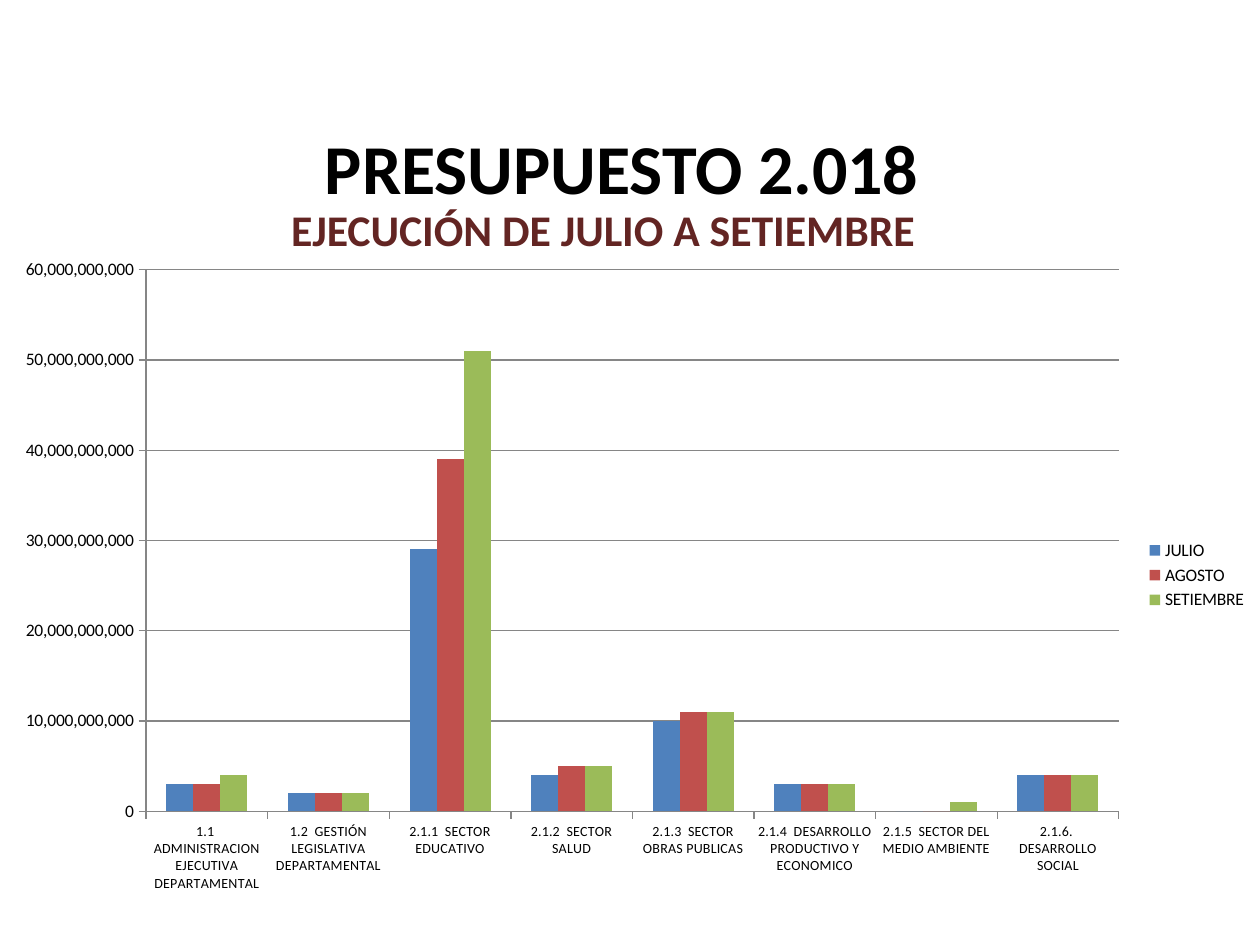
from typing import NamedTuple

from lxml import etree
from pptx import Presentation
from pptx.chart.data import CategoryChartData
from pptx.dml.color import RGBColor
from pptx.enum.chart import XL_CHART_TYPE, XL_LEGEND_POSITION, XL_TICK_MARK
from pptx.enum.text import MSO_ANCHOR, PP_ALIGN
from pptx.oxml.ns import qn
from pptx.util import Inches, Pt

FONT = "Calibri"
BLACK = RGBColor(0x00, 0x00, 0x00)
MAROON = RGBColor(0x63, 0x25, 0x23)
BLUE = RGBColor(0x4F, 0x81, 0xBD)
RED = RGBColor(0xC0, 0x50, 0x4D)
GREEN = RGBColor(0x9B, 0xBB, 0x59)
GRAY = RGBColor(0x86, 0x86, 0x86)
BILLION = 1_000_000_000


class Box(NamedTuple):
    left: float
    top: float
    width: float
    height: float

    def inches(self):
        return [Inches(length) for length in self]


class Month(NamedTuple):
    name: str
    color: RGBColor
    billions: list[int]


SECTORS = [
    "1.1  ADMINISTRACION EJECUTIVA DEPARTAMENTAL",
    "1.2  GESTIÓN LEGISLATIVA DEPARTAMENTAL",
    "2.1.1  SECTOR EDUCATIVO",
    "2.1.2  SECTOR SALUD",
    "2.1.3  SECTOR OBRAS PUBLICAS",
    "2.1.4  DESARROLLO PRODUCTIVO Y ECONOMICO",
    "2.1.5  SECTOR DEL MEDIO AMBIENTE",
    "2.1.6.  DESARROLLO SOCIAL",
]
MONTHS = [
    Month("JULIO", BLUE, [3, 2, 29, 4, 10, 3, 0, 4]),
    Month("AGOSTO", RED, [3, 2, 39, 5, 11, 3, 0, 4]),
    Month("SETIEMBRE", GREEN, [4, 2, 51, 5, 11, 3, 1, 4]),
]


def add_heading(slide, text: str, box: Box, *, size: float, color: RGBColor) -> None:
    frame = slide.shapes.add_textbox(*box.inches()).text_frame
    frame.word_wrap = True
    frame.vertical_anchor = MSO_ANCHOR.MIDDLE
    frame.margin_left = frame.margin_right = Inches(0.07)
    frame.margin_top = frame.margin_bottom = Inches(0.04)
    line = frame.paragraphs[0]
    line.alignment = PP_ALIGN.CENTER
    line.line_spacing = 0.9
    run = line.add_run()
    run.text = text
    run.font.name = FONT
    run.font.size = Pt(size)
    run.font.bold = True
    run.font.color.rgb = color


def set_font(font, size: float) -> None:
    font.name = FONT
    font.size = Pt(size)
    font.color.rgb = BLACK


def place_plot(chart, box: Box, area: Box) -> None:
    """Fix the inner plot area, given in inches from the chart's corner."""
    plot_area = chart._chartSpace.chart.plotArea
    for old in plot_area.findall(qn("c:layout")):
        plot_area.remove(old)
    layout = etree.Element(qn("c:layout"))
    manual = etree.SubElement(layout, qn("c:manualLayout"))
    wholes = (box.width, box.height) * 2
    fractions = [part / whole for part, whole in zip(area, wholes)]
    settings = [("layoutTarget", "inner"), ("xMode", "edge"), ("yMode", "edge"),
                *zip("xywh", fractions)]
    for tag, value in settings:
        etree.SubElement(manual, qn(f"c:{tag}")).set("val", str(value))
    plot_area.insert(0, layout)


def add_budget_chart(slide, box: Box) -> None:
    budget = CategoryChartData(number_format="#,##0")
    budget.categories = SECTORS
    for month in MONTHS:
        budget.add_series(month.name, [value * BILLION for value in month.billions])
    chart = slide.shapes.add_chart(
        XL_CHART_TYPE.COLUMN_CLUSTERED, *box.inches(), budget).chart
    chart.has_title = False
    set_font(chart.font, 10)
    place_plot(chart, box, Box(1.16, 0.19, 7.72, 4.3))

    # Columns
    columns = chart.plots[0]
    columns.gap_width = 150
    columns.overlap = 0
    columns.vary_by_categories = False
    for series, month in zip(columns.series, MONTHS):
        series.format.fill.solid()
        series.format.fill.fore_color.rgb = month.color

    # Axes
    sectors, amounts = chart.category_axis, chart.value_axis
    for axis, size in ((sectors, 8), (amounts, 10)):
        set_font(axis.tick_labels.font, size)
        axis.major_tick_mark = XL_TICK_MARK.OUTSIDE
        axis.format.line.color.rgb = GRAY
    amounts.minimum_scale = 0
    amounts.maximum_scale = 60 * BILLION
    amounts.major_unit = 10 * BILLION
    amounts.tick_labels.number_format = "#,##0"
    amounts.tick_labels.number_format_is_linked = False
    amounts.has_major_gridlines = True
    amounts.major_gridlines.format.line.color.rgb = GRAY

    # Legend
    chart.has_legend = True
    chart.legend.position = XL_LEGEND_POSITION.RIGHT
    chart.legend.include_in_layout = False
    set_font(chart.legend.font, 10)


def main() -> None:
    deck = Presentation()
    deck.slide_width, deck.slide_height = Inches(10), Inches(7.5)
    slide = deck.slides.add_slide(deck.slide_layouts[6])

    # Headings
    add_heading(slide, "EJECUCIÓN DE JULIO A SETIEMBRE",
                Box(0.24, 1.62, 9.09, 0.45), size=25, color=MAROON)
    add_heading(slide, "PRESUPUESTO 2.018",
                Box(0.08, 1.07, 9.71, 0.59), size=40, color=BLACK)

    # Spending by sector and month
    add_budget_chart(slide, Box(0, 1.95, 10, 5.23))
    deck.save("out.pptx")


if __name__ == "__main__":
    main()
